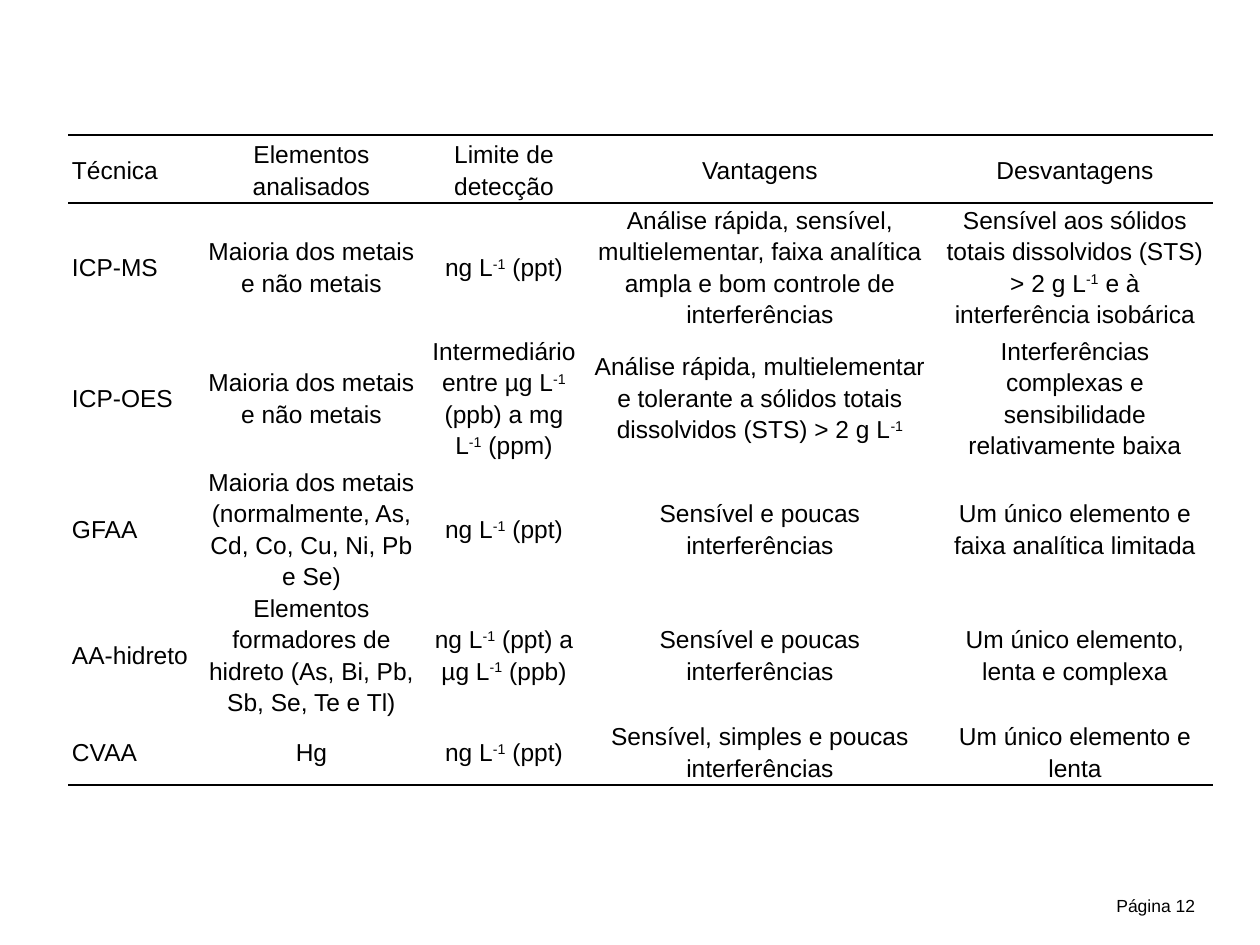
from dataclasses import dataclass

from lxml import etree
from pptx import Presentation
from pptx import util as u
from pptx.dml.color import RGBColor
from pptx.enum import text
from pptx.oxml import ns

BLACK = RGBColor(0, 0, 0)
FONT = "Arial"
EMU_PER_PX = 914400 / 126
SUPERSCRIPT = "‑1"
COLUMN_WIDTHS = (130, 227, 158, 354, 276)


@dataclass(frozen=True)
class Row:
    height: int
    cells: tuple[str, ...]
    spacing: int = 0
    ruled: tuple[str, ...] = ()


ROWS = (
    Row(68, ("Técnica", "Elementos analisados", "Limite de detecção", "Vantagens",
             "Desvantagens"), spacing=5, ruled=("T", "B")),
    Row(126, ("ICP-MS", "Maioria dos metais e não metais", "ng L‑1 (ppt)",
              "Análise rápida, sensível, multielementar, faixa analítica ampla "
              "e bom controle de interferências",
              "Sensível aos sólidos totais dissolvidos (STS) > 2 g L‑1 "
              "e à interferência isobárica"), ruled=("T",)),
    Row(136, ("ICP-OES", "Maioria dos metais e não metais",
              "Intermediário entre µg L‑1 (ppb) a mg L‑1 (ppm)",
              "Análise rápida, multielementar e tolerante a sólidos totais "
              "dissolvidos (STS) > 2 g L‑1",
              "Interferências complexas e sensibilidade relativamente baixa")),
    Row(126, ("GFAA", "Maioria dos metais (normalmente, As, Cd, Co, Cu, Ni, Pb e Se)",
              "ng L‑1 (ppt)", "Sensível e poucas interferências",
              "Um único elemento e faixa analítica limitada")),
    Row(126, ("AA-hidreto", "Elementos formadores de hidreto (As, Bi, Pb, Sb, Se, Te e Tl)",
              "ng L‑1 (ppt) a µg L‑1 (ppb)", "Sensível e poucas interferências",
              "Um único elemento, lenta e complexa")),
    Row(68, ("CVAA", "Hg", "ng L‑1 (ppt)", "Sensível, simples e poucas interferências",
             "Um único elemento e lenta"), ruled=("B",)),
)


def px(length: int) -> u.Emu:
    return u.Emu(round(length * EMU_PER_PX))


def add_run(paragraph, wording: str, size: int, raised: bool = False) -> None:
    run = paragraph.add_run()
    run.text = wording
    run.font.name = FONT
    run.font.size = u.Pt(size)
    run.font.bold = False
    run.font.color.rgb = BLACK
    if raised:
        run.font._element.set("baseline", "30000")


def set_borders(cell, ruled: tuple[str, ...]) -> None:
    properties = cell._tc.get_or_add_tcPr()
    for side in "LRTB":
        line = etree.SubElement(properties, ns.qn(f"a:ln{side}"), w=str(u.Pt(1)))
        if side in ruled:
            fill = etree.SubElement(line, ns.qn("a:solidFill"))
            etree.SubElement(fill, ns.qn("a:srgbClr"), val=str(BLACK))
        else:
            etree.SubElement(line, ns.qn("a:noFill"))


def fill_cell(cell, wording: str, row: Row, alignment) -> None:
    cell.margin_left = cell.margin_right = px(4)
    cell.margin_top = cell.margin_bottom = 0
    cell.vertical_anchor = text.MSO_ANCHOR.MIDDLE
    set_borders(cell, row.ruled)
    cell.fill.background()
    paragraph = cell.text_frame.paragraphs[0]
    paragraph.alignment = alignment
    paragraph.line_spacing = u.Pt(18)
    paragraph.space_before = paragraph.space_after = u.Pt(row.spacing)
    for index, part in enumerate(wording.split(SUPERSCRIPT)):
        if index:
            add_run(paragraph, SUPERSCRIPT, 14, raised=True)
        if part:
            add_run(paragraph, part, 14)


def add_techniques_table(slide, left: int, top: int) -> None:
    table = slide.shapes.add_table(
        len(ROWS), len(COLUMN_WIDTHS), px(left), px(top),
        px(sum(COLUMN_WIDTHS)), px(sum(row.height for row in ROWS))).table
    table.first_row = table.horz_banding = False
    for column, width in zip(table.columns, COLUMN_WIDTHS):
        column.width = px(width)
    for row_index, row in enumerate(ROWS):
        table.rows[row_index].height = px(row.height)
        for column_index, wording in enumerate(row.cells):
            alignment = text.PP_ALIGN.CENTER if column_index else text.PP_ALIGN.JUSTIFY
            fill_cell(table.cell(row_index, column_index), wording, row, alignment)


def add_page_number(slide, wording: str) -> None:
    frame = slide.shapes.add_textbox(px(967), px(895), px(228), px(50)).text_frame
    frame.word_wrap = True
    frame.margin_left = frame.margin_right = frame.margin_top = frame.margin_bottom = 0
    paragraph = frame.paragraphs[0]
    paragraph.alignment = text.PP_ALIGN.RIGHT
    add_run(paragraph, wording, 10)


def main() -> None:
    presentation = Presentation()
    presentation.slide_width = px(1260)
    presentation.slide_height = px(945)
    slide = presentation.slides.add_slide(presentation.slide_layouts[6])
    add_page_number(slide, "Página 12")
    add_techniques_table(slide, 68, 135)
    presentation.save("out.pptx")


if __name__ == "__main__":
    main()
